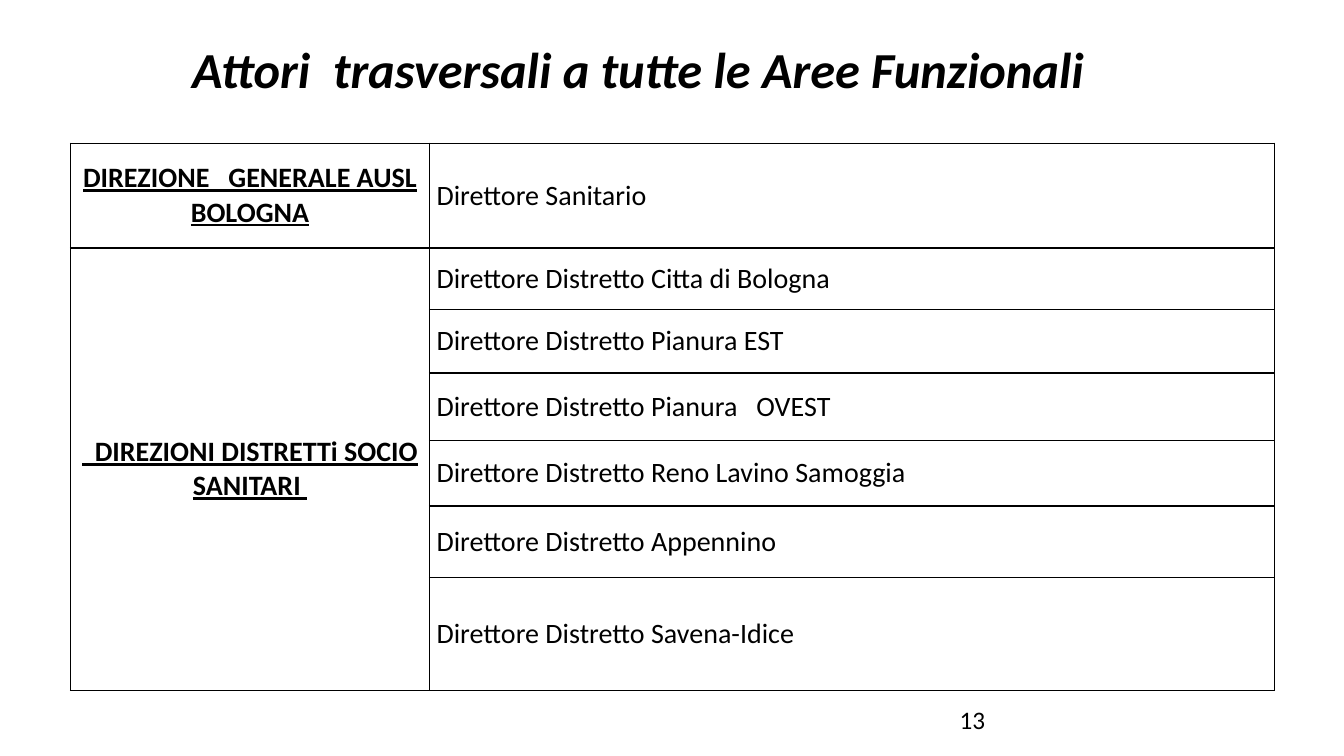
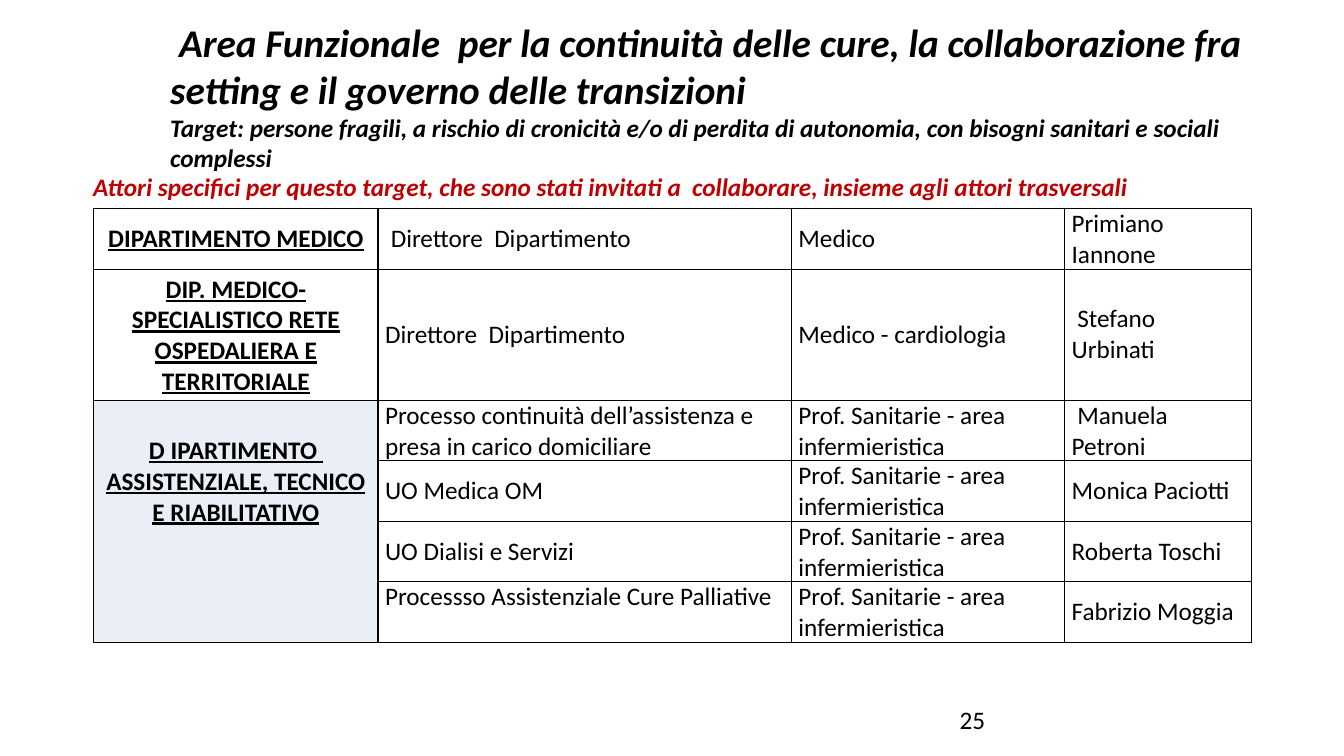
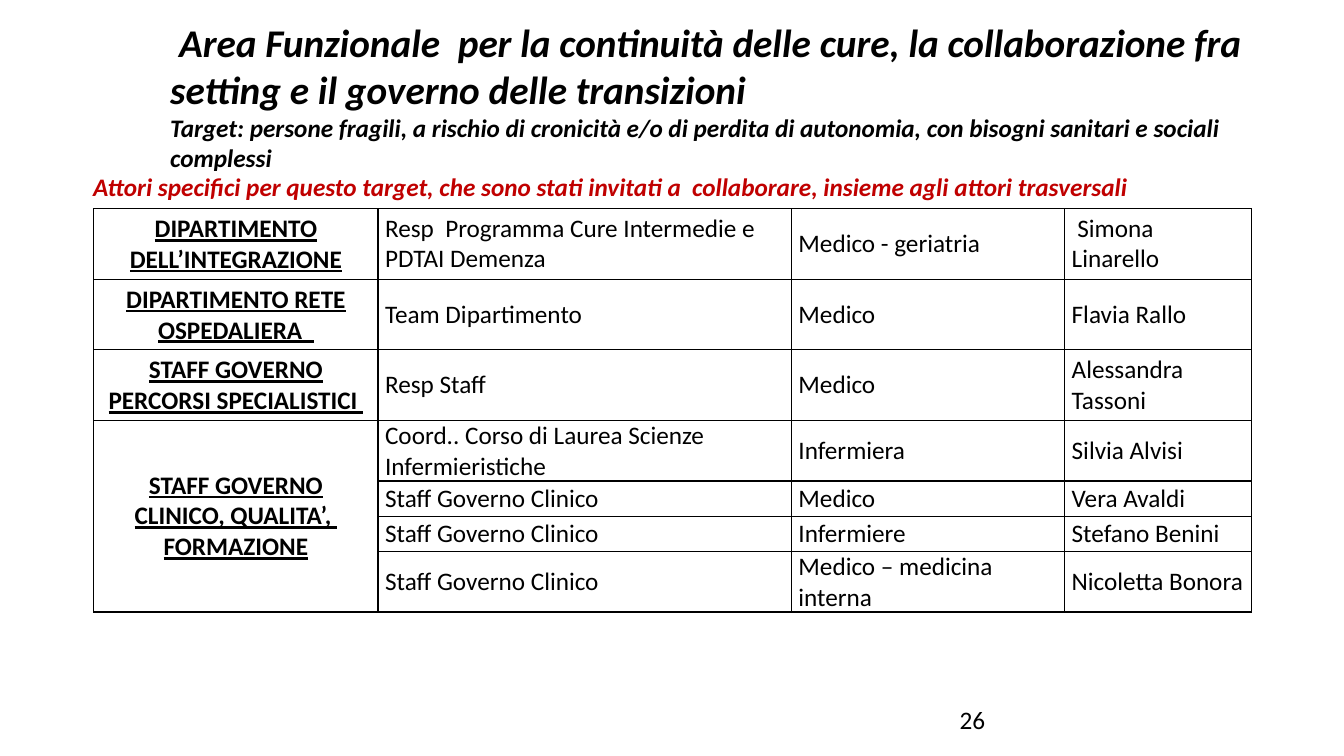
from lxml.etree import SubElement
from pptx import Presentation
from pptx.dml.color import RGBColor
from pptx.enum.text import MSO_ANCHOR as ANCHOR, MSO_AUTO_SIZE as FIT, PP_ALIGN as ALIGN
from pptx.oxml.ns import qn
from pptx.util import Pt

PX = 9144
FONT = "Calibri"
COLORS = {"ink": "000000", "accent": "C00000", "tint": "EAEFF7"}
EMPHASIS = {"bold": True, "italic": True}
HEADING = {"bold": True, "underline": True}

AREA_TITLE = " Area Funzionale  per la continuità delle cure, la collaborazione fra setting e il governo delle transizioni"
TARGET = "Target: persone fragili, a rischio di cronicità e/o di perdita di autonomia, con bisogni sanitari e sociali complessi"
INVITED = "Attori specifici per questo target, che sono stati invitati a  collaborare, insieme agli attori trasversali"
NURSING = "Prof. Sanitarie - area infermieristica"
CLINICAL = "Staff Governo Clinico"
PALLIATIVE = "Processso Assistenziale Cure Palliative"
ASSISTANCE = "D IPARTIMENTO  ASSISTENZIALE, TECNICO E RIABILITATIVO"

AREA_BOXES = [
    ((159, 13, 1140, 165), True, [[(AREA_TITLE, 28, "ink", EMPHASIS)], [(TARGET, 18, "ink", EMPHASIS)]]),
    ((77, 165, 1066, 40), False, [[(" ", 18, "ink", {}), (INVITED, 18, "accent", EMPHASIS)]]),
]
AREA_TABLE = {"left": 93, "top": 207, "columns": [282, 410, 271, 185], "size": 18}

PAGES = [
    {
        "number": "13",
        "boxes": [
            ((172, 33, 942, 71), False, [[
                (" ", 28, "ink", EMPHASIS),
                ("Attori  trasversali a tutte le Aree Funzionali", 36, "ink", EMPHASIS),
            ]]),
        ],
        "table": {"left": 70, "top": 142, "columns": [356, 838], "size": 20},
        "heights": [104, 61, 63, 67, 65, 71, 112],
        "groups": [
            ("DIREZIONE   GENERALE AUSL BOLOGNA", [["Direttore Sanitario"]]),
            ("  DIREZIONI DISTRETTi SOCIO SANITARI ", [
                ["Direttore Distretto Citta di Bologna"],
                ["Direttore Distretto Pianura EST"],
                ["Direttore Distretto Pianura   OVEST"],
                ["Direttore Distretto Reno Lavino Samoggia"],
                ["Direttore Distretto Appennino"],
                ["Direttore Distretto Savena-Idice"],
            ]),
        ],
    },
    {
        "number": "25",
        "boxes": AREA_BOXES,
        "table": AREA_TABLE,
        "heights": [60, 130, 60, 60, 60, 60],
        "groups": [
            ("DIPARTIMENTO MEDICO", [[" Direttore  Dipartimento", "Medico", "Primiano Iannone"]]),
            ("DIP. MEDICO-SPECIALISTICO RETE OSPEDALIERA E TERRITORIALE", [
                ["Direttore  Dipartimento", "Medico - cardiologia", " Stefano   Urbinati"],
            ]),
            (ASSISTANCE, [
                ["Processo continuità dell’assistenza e presa in carico domiciliare", NURSING, " Manuela Petroni"],
                ["UO Medica OM", NURSING, "Monica Paciotti"],
                ["UO Dialisi e Servizi", NURSING, "Roberta Toschi"],
                [PALLIATIVE, NURSING, "Fabrizio Moggia"],
            ]),
        ],
    },
    {
        "number": "26",
        "boxes": AREA_BOXES,
        "table": AREA_TABLE,
        "heights": [70, 70, 70, 60, 35, 35, 60],
        "groups": [
            ("DIPARTIMENTO DELL’INTEGRAZIONE", [
                ["Resp  Programma Cure Intermedie e PDTAI Demenza", "Medico - geriatria", " Simona Linarello"],
            ]),
            ("DIPARTIMENTO RETE OSPEDALIERA  ", [["Team Dipartimento", "Medico", "Flavia Rallo"]]),
            ("STAFF GOVERNO PERCORSI SPECIALISTICI ", [["Resp Staff", "Medico", "Alessandra Tassoni"]]),
            ("STAFF GOVERNO CLINICO, QUALITA’,  FORMAZIONE", [
                ["Coord.. Corso di Laurea Scienze Infermieristiche", "Infermiera", "Silvia Alvisi"],
                [CLINICAL, "Medico", "Vera Avaldi"],
                [CLINICAL, "Infermiere", "Stefano Benini"],
                [CLINICAL, "Medico – medicina interna", "Nicoletta Bonora"],
            ]),
        ],
    },
]


def add_span(para, text, size, color, style):
    span = para.add_run()
    span.text = text
    span.font.name = FONT
    span.font.size = Pt(size)
    span.font.color.rgb = RGBColor.from_string(COLORS[color])
    span.font.bold = style.get("bold", False)
    span.font.italic = style.get("italic", False)
    span.font.underline = style.get("underline", False)


def add_borders(cell):
    properties = cell._tc.get_or_add_tcPr()
    for side in ("a:lnL", "a:lnR", "a:lnT", "a:lnB"):
        line = SubElement(properties, qn(side), w=str(Pt(1)))
        fill = SubElement(line, qn("a:solidFill"))
        SubElement(fill, qn("a:srgbClr"), val=COLORS["ink"])


deck = Presentation()
deck.slide_width = 1333 * PX
deck.slide_height = 750 * PX

for content in PAGES:
    page = deck.slides.add_slide(deck.slide_layouts[6])

    number = ((942, 694, 300, 40), True, [[(content["number"], 18, "ink", {})]])
    for place, wraps, paragraphs in [number] + content["boxes"]:
        box = page.shapes.add_textbox(*(length * PX for length in place))
        frame = box.text_frame
        frame.word_wrap = wraps
        frame.auto_size = FIT.SHAPE_TO_FIT_TEXT
        for index, spans in enumerate(paragraphs):
            para = frame.add_paragraph() if index else frame.paragraphs[0]
            for span in spans:
                add_span(para, *span)

    layout = content["table"]
    widths, heights = layout["columns"], content["heights"]
    table = page.shapes.add_table(
        len(heights), len(widths), layout["left"] * PX, layout["top"] * PX,
        sum(widths) * PX, sum(heights) * PX,
    ).table
    table.first_row = False
    table.horz_banding = False
    for column, width in zip(table.columns, widths):
        column.width = width * PX
    for row, height in zip(table.rows, heights):
        row.height = height * PX
    for cell in table.iter_cells():
        add_borders(cell)
        cell.fill.background()
        cell.vertical_anchor = ANCHOR.MIDDLE

    first = 0
    for heading, rows in content["groups"]:
        label = table.cell(first, 0)
        if len(rows) > 1:
            label.merge(table.cell(first + len(rows) - 1, 0))
        para = label.text_frame.paragraphs[0]
        para.alignment = ALIGN.CENTER
        add_span(para, heading, layout["size"], "ink", HEADING)
        if heading == ASSISTANCE:
            label.fill.solid()
            label.fill.fore_color.rgb = RGBColor.from_string(COLORS["tint"])
            label.vertical_anchor = ANCHOR.TOP
            label.margin_top = 35 * PX

        for row_index, texts in enumerate(rows, first):
            for column_index, text in enumerate(texts, 1):
                cell = table.cell(row_index, column_index)
                cell.margin_left = cell.margin_right = 7 * PX
                cell.margin_top = cell.margin_bottom = 0
                if text == PALLIATIVE:
                    cell.vertical_anchor = ANCHOR.TOP
                add_span(cell.text_frame.paragraphs[0], text, layout["size"], "ink", {})
        first += len(rows)

deck.save("out.pptx")
